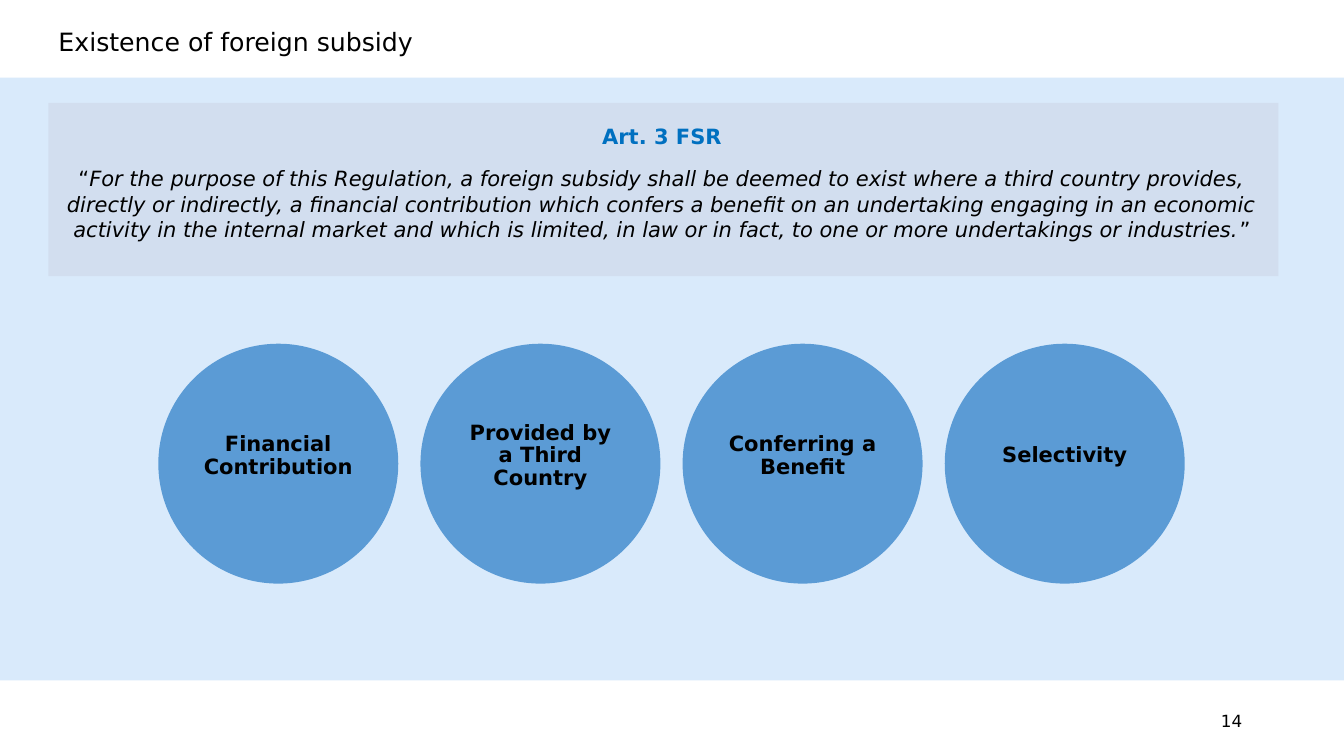
import pptx
import pptx.util
import pptx.dml.color
import pptx.enum.shapes
import pptx.enum.text

Inches = pptx.util.Inches
Pt = pptx.util.Pt
Kind = pptx.enum.shapes.MSO_SHAPE
Align = pptx.enum.text.PP_ALIGN
Anchor = pptx.enum.text.MSO_ANCHOR


def paint(kind, left, top, width, height, color):
    shape = slide.shapes.add_shape(
        kind, Inches(left), Inches(top), Inches(width), Inches(height))
    shape.shadow.inherit = False
    shape.fill.solid()
    shape.fill.fore_color.rgb = pptx.dml.color.RGBColor.from_string(color)
    shape.line.fill.background()
    return shape


def style(para, size, align, color="000000", bold=False):
    para.alignment = align
    for run in para.runs:
        run.font.name = "DejaVu Sans"
        run.font.size = Pt(size)
        run.font.bold = bold
        run.font.color.rgb = pptx.dml.color.RGBColor.from_string(color)


deck = pptx.Presentation()
deck.slide_width = Inches(13.33)
deck.slide_height = Inches(7.5)
slide = deck.slides.add_slide(deck.slide_layouts[5])

paint(Kind.RECTANGLE, 0, 0.77, 13.33, 5.98, "D9EAFB")

title = slide.shapes.title
title.left, title.top = Inches(0.48), Inches(0.24)
title.width, title.height = Inches(12.2), Inches(0.44)
title.text_frame.text = "Existence of foreign subsidy"
title.text_frame.vertical_anchor = Anchor.TOP
head = title.text_frame.paragraphs[0]
head.line_spacing = 0.9
style(head, 18, Align.LEFT)

panel = paint(Kind.RECTANGLE, 0.48, 1.02, 12.2, 1.72, "D2DEEF")
frame = panel.text_frame
frame.word_wrap = True
frame.vertical_anchor = Anchor.TOP
frame.margin_left, frame.margin_right = Inches(0.09), Inches(0.12)
frame.margin_top, frame.margin_bottom = Inches(0.21), Inches(0.13)
frame.text = "Art. 3 FSR"
frame.paragraphs[0].space_after = Pt(12)
style(frame.paragraphs[0], 15, Align.CENTER, "0070C0", True)
quote = frame.add_paragraph()
parts = [
    "“",
    "For the purpose of this Regulation, a foreign subsidy shall be deemed "
    "to exist where a third country provides, directly or indirectly, a "
    "financial contribution which confers a benefit on an undertaking "
    "engaging in an economic activity in the internal market and which is "
    "limited, in law or in fact, to one or more undertakings or industries.",
    "”",
]
for part in parts:
    quote.add_run().text = part
style(quote, 15, Align.CENTER)
quote.runs[1].font.italic = True

labels = ["Financial Contribution", "Provided by a Third Country",
          "Conferring a Benefit", "Selectivity"]
for index, label in enumerate(labels):
    disc = paint(Kind.OVAL, 1.57 + 2.6 * index, 3.41, 2.38, 2.38, "5B9BD5")
    frame = disc.text_frame
    frame.word_wrap = True
    frame.vertical_anchor = Anchor.MIDDLE
    frame.margin_left = frame.margin_right = Inches(0.04)
    frame.margin_top, frame.margin_bottom = Inches(0.59), Inches(0.74)
    frame.text = label
    frame.paragraphs[0].line_spacing = 0.9
    style(frame.paragraphs[0], 15, Align.CENTER, bold=True)

number = slide.shapes.add_textbox(
    Inches(9.42), Inches(6.95), Inches(3), Inches(0.4))
number.text_frame.word_wrap = True
number.text_frame.vertical_anchor = Anchor.MIDDLE
number.text_frame.text = "14"
style(number.text_frame.paragraphs[0], 12, Align.RIGHT)

deck.save("out.pptx")
